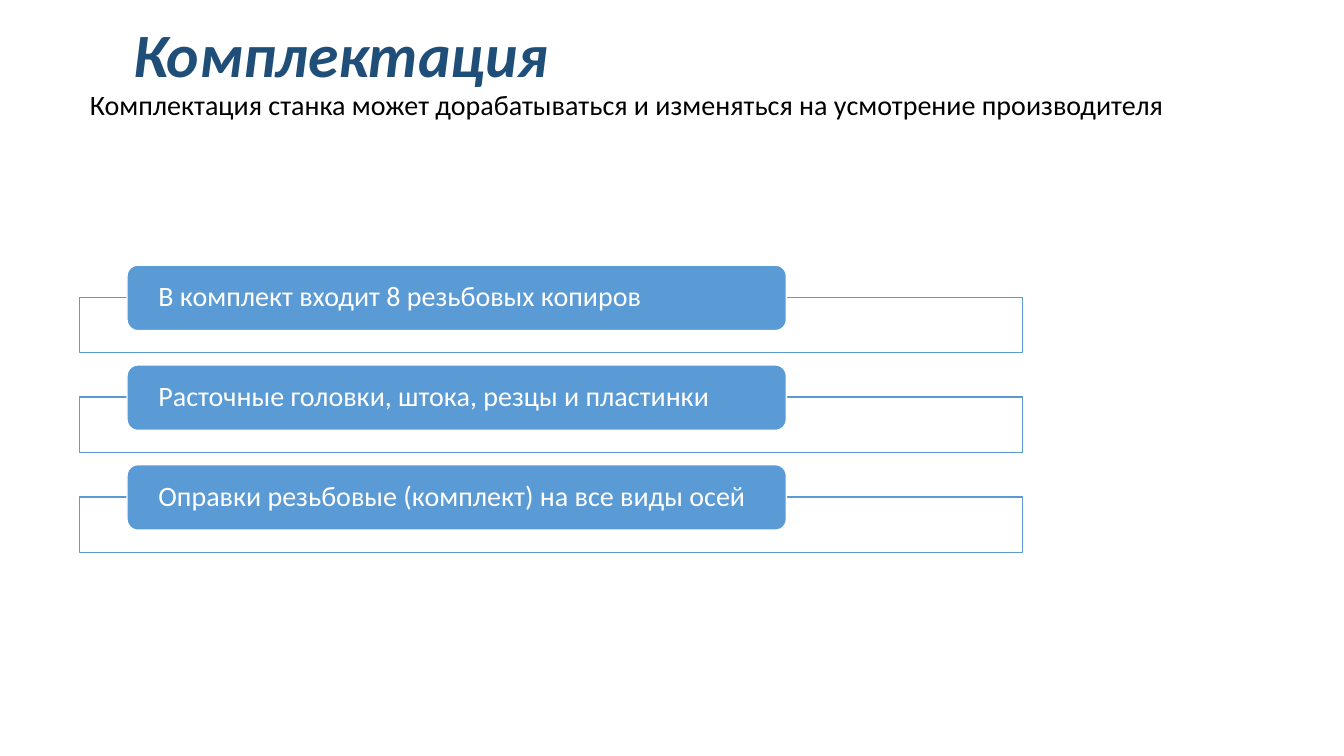
from pptx import Presentation
from pptx.dml.color import RGBColor
from pptx.enum.shapes import MSO_SHAPE as Shape
from pptx.enum.text import MSO_ANCHOR as Anchor, MSO_AUTO_SIZE as AutoSize, PP_ALIGN as Align
from pptx.util import Pt

HEADING = "Комплектация"
NOTE = "Комплектация станка может дорабатываться и изменяться на усмотрение производителя"
KIT = [
    "В комплект входит 8 резьбовых копиров",
    "Расточные головки, штока, резцы и пластинки",
    "Оправки резьбовые (комплект) на все виды осей",
]

NAVY, BLUE, WHITE, BLACK = "1F4E79", "5B9BD5", "FFFFFF", "000000"
HEADING_FONT = {"name": "Calibri", "size": Pt(44), "bold": True, "italic": True}
BODY_FONT = {"name": "Calibri", "size": Pt(20), "bold": False, "italic": False}

SLIDE_SIZE = (1333, 750)
TITLE_BOX = (79, 0, 1150, 145)
HEADING_INDENT = 43
FRAME_BOX = (79, 295, 935, 55)
LABEL_BOX = (126, 263, 654, 65)
LABEL_INSET = 28
ROW_STEP = 99


def px(length):
    """Turn px, 100 to the inch, into EMU."""
    return length * 9144


def rgb(hex_color):
    """Turn a hex string into a colour."""
    return RGBColor.from_string(hex_color)


def assign(target, values):
    """Set each named attribute on the target."""
    for key, value in values.items():
        setattr(target, key, value)


def place(shape, box):
    """Move and size a shape to a px box."""
    assign(shape, dict(zip(("left", "top", "width", "height"), map(px, box))))


def add_run(paragraph, text, font, color):
    """Add a formatted run to a paragraph."""
    run = paragraph.add_run()
    run.text = text
    assign(run.font, font)
    run.font.color.rgb = rgb(color)


def add_box(slide, kind, box, row, fill, line):
    """Add a filled and outlined shape on the given row."""
    left, top, width, height = box
    shape = slide.shapes.add_shape(kind, 0, 0, 0, 0)
    place(shape, (left, top + row * ROW_STEP, width, height))
    shape.shadow.inherit = False
    shape.fill.solid()
    shape.fill.fore_color.rgb = rgb(fill)
    shape.line.color.rgb = rgb(line)
    shape.line.width = Pt(1)
    return shape


def write_title(title):
    """Fill the title with the heading and the note under it."""
    place(title, TITLE_BOX)
    assign(title.text_frame, {"vertical_anchor": Anchor.MIDDLE, "word_wrap": True,
                              "auto_size": AutoSize.NONE})
    paragraph = title.text_frame.paragraphs[0]
    assign(paragraph, {"alignment": Align.LEFT, "line_spacing": 0.9})
    paragraph.get_or_add_pPr() if hasattr(paragraph, "get_or_add_pPr") else None
    add_run(paragraph, HEADING, HEADING_FONT, NAVY)
    paragraph.add_line_break()
    add_run(paragraph, NOTE, BODY_FONT, BLACK)
    properties = paragraph._p.get_or_add_pPr()
    properties.set("marL", "0")
    properties.set("indent", str(px(HEADING_INDENT)))


def write_label(label, text):
    """Put left-aligned text into a kit label."""
    inset = px(LABEL_INSET)
    assign(label.text_frame, {"margin_left": inset, "margin_right": inset, "margin_top": 0,
                              "margin_bottom": 0, "word_wrap": True,
                              "vertical_anchor": Anchor.MIDDLE})
    paragraph = label.text_frame.paragraphs[0]
    assign(paragraph, {"alignment": Align.LEFT, "line_spacing": 0.9})
    add_run(paragraph, text, BODY_FONT, WHITE)


def main():
    """Build the slide and save it."""
    deck = Presentation()
    deck.slide_width, deck.slide_height = map(px, SLIDE_SIZE)
    slide = deck.slides.add_slide(deck.slide_layouts[5])
    write_title(slide.shapes.title)
    for row, text in enumerate(KIT):
        add_box(slide, Shape.RECTANGLE, FRAME_BOX, row, WHITE, BLUE)
        label = add_box(slide, Shape.ROUNDED_RECTANGLE, LABEL_BOX, row, BLUE, WHITE)
        write_label(label, text)
    deck.save("out.pptx")


if __name__ == "__main__":
    main()
